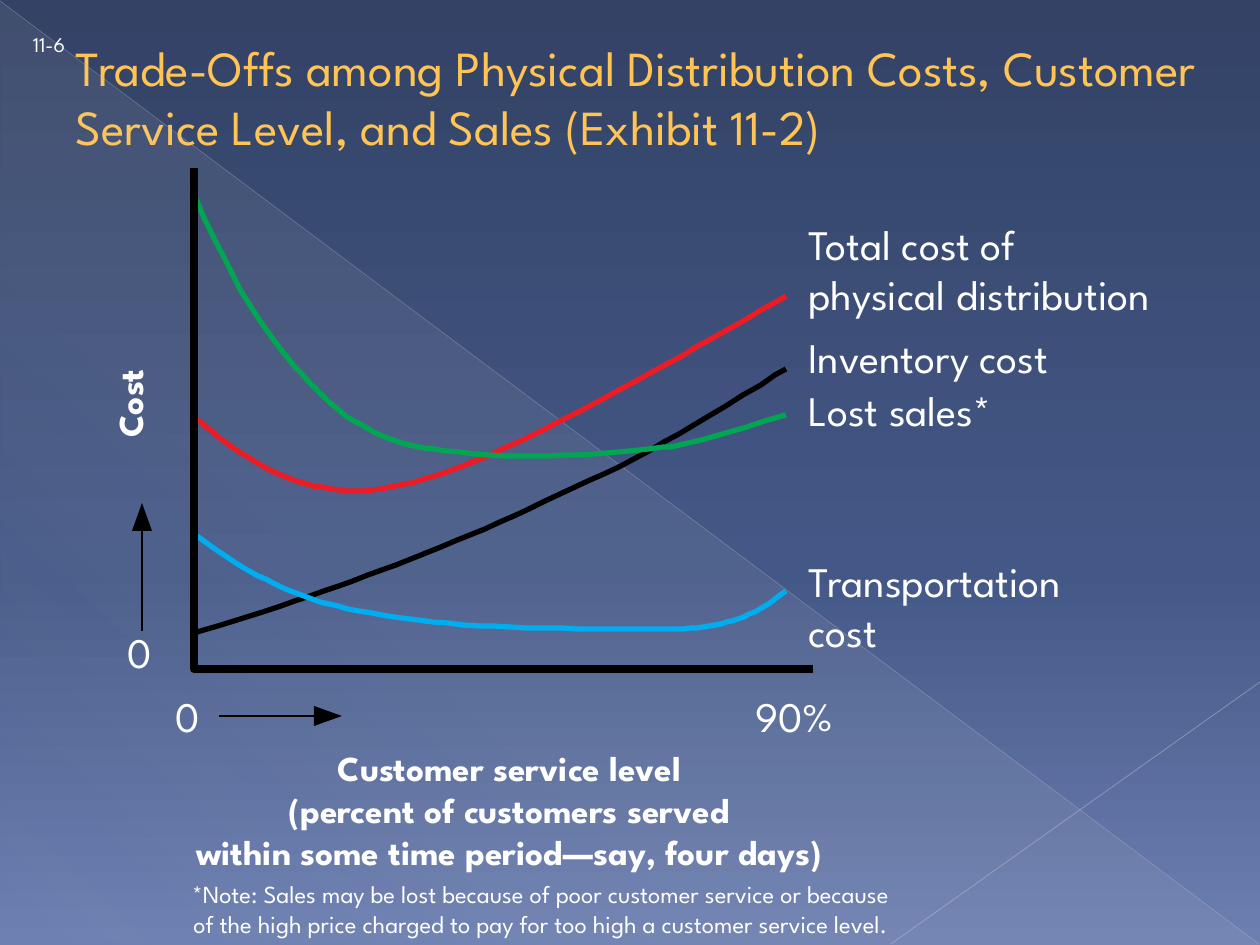
from dataclasses import dataclass
from lxml import etree
from pptx import Presentation, util as u
from pptx.dml.color import RGBColor
from pptx.enum import shapes as sh, text as tx
from pptx.oxml import ns, parse_xml

PX = 914400 / 126  # EMU in one px
FONT = "League Spartan"
HUES = dict(title="FFC453", text="FFFFFF", ink="000000", total="ED1C24",
            stock="000000", move="00AEEF", lost="00A651",
            top="334265", mid="445887", low="6C7FB1", veil="D4D4D6",
            long="B9BDC8", short="C1C4CE")
LEFT, MID = tx.PP_ALIGN.LEFT, tx.PP_ALIGN.CENTER


@dataclass
class Label:
    lines: list[str]
    box: tuple[int, int, int, int]
    size: int = 24
    align: tx.PP_ALIGN = LEFT
    bold: bool = False
    turn: bool = False
    base: bool = False


@dataclass
class Curve:
    hue: str
    knots: list[tuple[int, int]]


LABELS = [
    Label(["Customer service level", "(percent of customers served",
           "within some time period—say, four days)"],
          (105, 740, 809, 140), 20, MID, bold=True),
    Label(["*Note: Sales may be lost because of poor customer service or because",
           "of the high price charged to pay for too high a customer service level."],
          (21, 873, 1040, 72), 14, MID),
    Label(["Total cost of", "physical distribution"], (796, 212, 431, 115)),
    Label(["Inventory cost"], (796, 325, 314, 63)),
    Label(["Lost sales*"], (796, 378, 233, 63)),
    Label(["Transportation", "cost"], (796, 549, 318, 115)),
    Label(["0"], (114, 620, 51, 63), align=MID),
    Label(["0"], (162, 684, 51, 63), align=MID),
    Label(["90%"], (742, 684, 105, 63), align=MID),
    Label(["Cost"], (102, 347, 68, 113), 20, MID, bold=True, turn=True),
    Label(["11-6"], (0, 21, 98, 42), 12, MID, base=True),
]

CURVES = [
    Curve("total", [(194, 417), (228, 444), (261, 465), (296, 481), (339, 490),
                    (372, 490), (421, 480), (475, 461), (547, 428), (636, 381),
                    (711, 339), (786, 296)]),
    Curve("stock", [(194, 633), (266, 611), (339, 586), (411, 559), (485, 529),
                    (558, 495), (634, 459), (709, 416), (786, 369)]),
    Curve("move", [(194, 534), (236, 563), (273, 583), (312, 599), (359, 611),
                   (433, 622), (510, 627), (592, 629), (634, 629), (677, 629),
                   (709, 626), (738, 619), (765, 606), (786, 591)]),
    Curve("lost", [(192, 190), (217, 244), (248, 302), (287, 357), (323, 396),
                   (354, 421), (396, 441), (446, 451), (519, 456), (595, 454),
                   (649, 449), (684, 444), (733, 431), (786, 415)]),
]


def emu(px: float) -> u.Emu:
    return u.Emu(round(px * PX))


def rgb(hue: str) -> RGBColor:
    return RGBColor.from_string(HUES[hue])


def shade(root, stops: list[tuple[int, str, int]], angle: int) -> None:
    """Swap the first solid fill for a gradient of (place, hue, opacity)."""
    old = next(root.iter(ns.qn("a:solidFill")))
    marks = "".join(
        f'<a:gs pos="{at * 1000}"><a:srgbClr val="{HUES[hue]}">'
        f'<a:alpha val="{alpha * 1000}"/></a:srgbClr></a:gs>'
        for at, hue, alpha in stops)
    new = parse_xml(f'<a:gradFill {ns.nsdecls("a")} rotWithShape="1"><a:gsLst>{marks}'
                    f'</a:gsLst><a:lin ang="{angle * 60000}" scaled="0"/></a:gradFill>')
    old.getparent().replace(old, new)


def line(slide, start: tuple, end: tuple, hue: str, width: float,
         alpha: int = 100) -> None:
    rule = slide.shapes.add_connector(sh.MSO_CONNECTOR.STRAIGHT,
                                      *map(emu, start + end))
    rule.line.color.rgb = rgb(hue)
    rule.line.width = u.Pt(width)
    props = rule.element.spPr
    if alpha < 100:
        tint = next(props.iter(ns.qn("a:srgbClr")))
        etree.SubElement(tint, ns.qn("a:alpha")).set("val", str(alpha * 1000))
    etree.SubElement(props, ns.qn("a:effectLst"))


def trace(slide, dots: list, hue: str, width: float = 0) -> None:
    """Draw an open path, or a filled outline when width is 0."""
    pen = slide.shapes.build_freeform(*dots[0], scale=PX)
    pen.add_line_segments(dots[1:], close=not width)
    form = pen.convert_to_shape()
    form.shadow.inherit = False
    if width:
        form.fill.background()
        form.line.color.rgb = rgb(hue)
        form.line.width = u.Pt(width)
    else:
        form.fill.solid()
        form.fill.fore_color.rgb = rgb(hue)
        form.line.fill.background()


def smooth(knots: list, steps: int = 5) -> list:
    """Catmull-Rom curve through the knots."""
    ends = [knots[0], *knots, knots[-1]]
    dots = [knots[0]]
    for a, b, c, d in zip(ends, ends[1:], ends[2:], ends[3:]):
        for t in (i / steps for i in range(1, steps + 1)):
            dots.append(tuple(
                (2 * q + (r - p) * t + (2 * p - 5 * q + 4 * r - s) * t ** 2
                 + (3 * q - p - 3 * r + s) * t ** 3) / 2
                for p, q, r, s in zip(a, b, c, d)))
    return dots


def write(para, words: str, size: int, hue: str, bold: bool = False) -> None:
    run = para.add_run()
    run.text = words
    run.font.name, run.font.size, run.font.bold = FONT, u.Pt(size), bold
    run.font.color.rgb = rgb(hue)


def label(slide, item: Label) -> None:
    frame = slide.shapes.add_textbox(*map(emu, item.box)).text_frame
    frame.word_wrap = True
    if item.base:
        frame.vertical_anchor = tx.MSO_ANCHOR.BOTTOM
    if item.turn:
        frame._txBody.bodyPr.set("vert", "vert270")
    for i, words in enumerate(item.lines):
        para = frame.add_paragraph() if i else frame.paragraphs[0]
        para.alignment = item.align
        write(para, words, item.size, "text", item.bold)


def main() -> None:
    deck = Presentation()
    deck.slide_width, deck.slide_height = emu(1260), emu(945)
    slide = deck.slides.add_slide(deck.slide_layouts[5])

    # Backdrop
    slide.background.fill.solid()
    shade(slide.element, [(0, "top", 100), (60, "mid", 100), (100, "low", 100)], 90)
    veil = slide.shapes.add_shape(sh.MSO_SHAPE.RIGHT_TRIANGLE,
                                  *map(emu, (1, 2, 1259, 943)))
    veil.shadow.inherit = False
    veil.line.fill.background()
    veil.fill.solid()
    shade(veil.element, [(0, "veil", 10), (70, "veil", 8), (100, "veil", 1)], 133)
    line(slide, (0, 1), (1259, 944), "long", 0.39, 35)
    line(slide, (1260, 682), (891, 944), "short", 0.47, 45)

    # Title
    title = slide.shapes.title
    title.left, title.top, title.width, title.height = map(emu, (63, 0, 1166, 193))
    frame = title.text_frame
    frame.auto_size = tx.MSO_AUTO_SIZE.NONE
    frame.vertical_anchor = tx.MSO_ANCHOR.MIDDLE
    frame.paragraphs[0].alignment = LEFT
    write(frame.paragraphs[0], "Trade-Offs among Physical Distribution Costs, "
          "Customer Service Level, and Sales (Exhibit 11-2)", 28, "title")

    # Curves, then the axes over their ends
    for curve in CURVES:
        trace(slide, smooth(curve.knots), curve.hue, 3)
    trace(slide, [(194, 168), (194, 669), (813, 669)], "ink", 4.5)

    # Arrows along both axes
    line(slide, (142, 631), (142, 524), "ink", 1.5)
    trace(slide, [(142, 503), (132, 531), (152, 531)], "ink")
    line(slide, (219, 716), (320, 716), "ink", 1.5)
    trace(slide, [(342, 716), (314, 706), (314, 726)], "ink")

    # Labels
    for item in LABELS:
        label(slide, item)
    deck.save("out.pptx")


if __name__ == "__main__":
    main()
